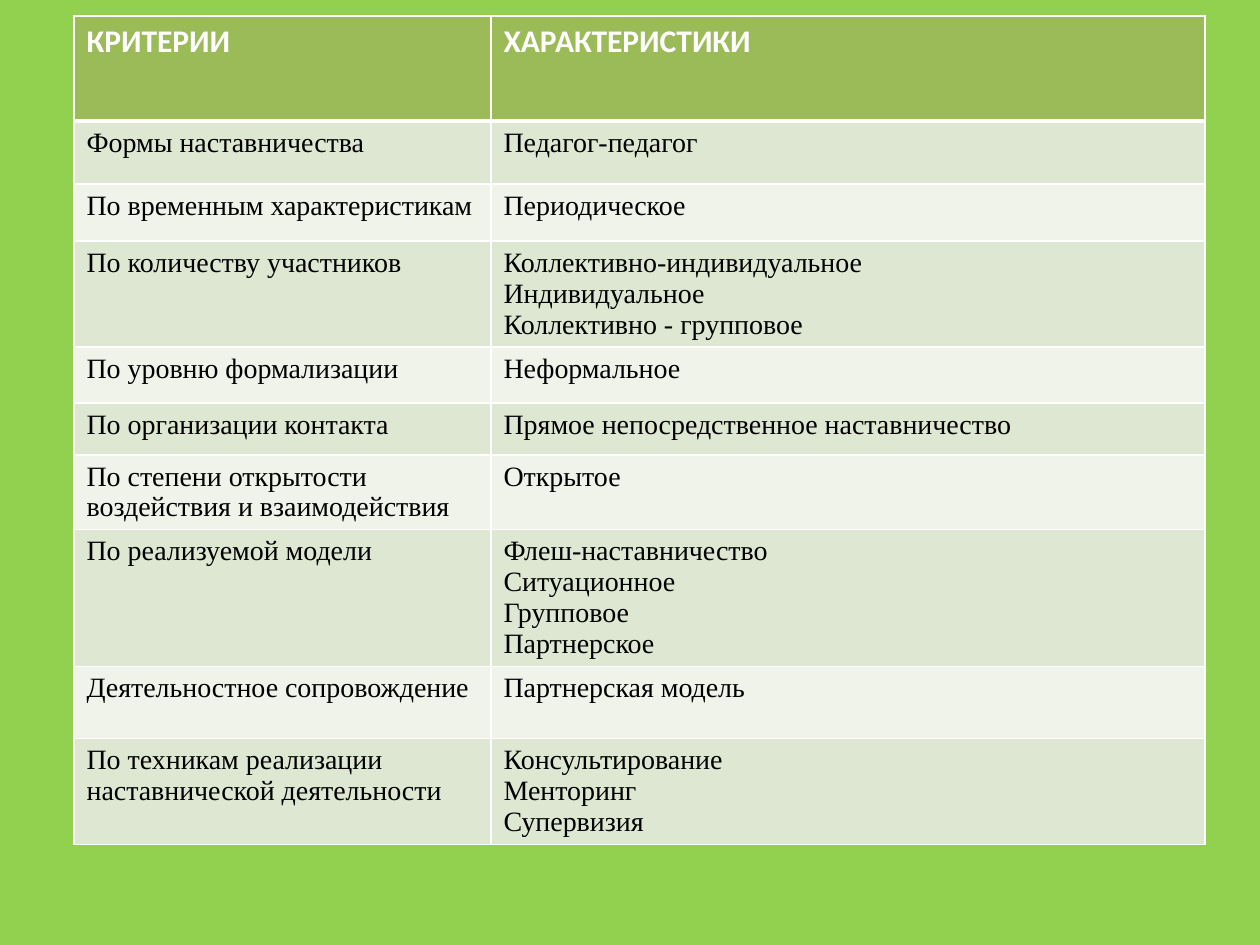
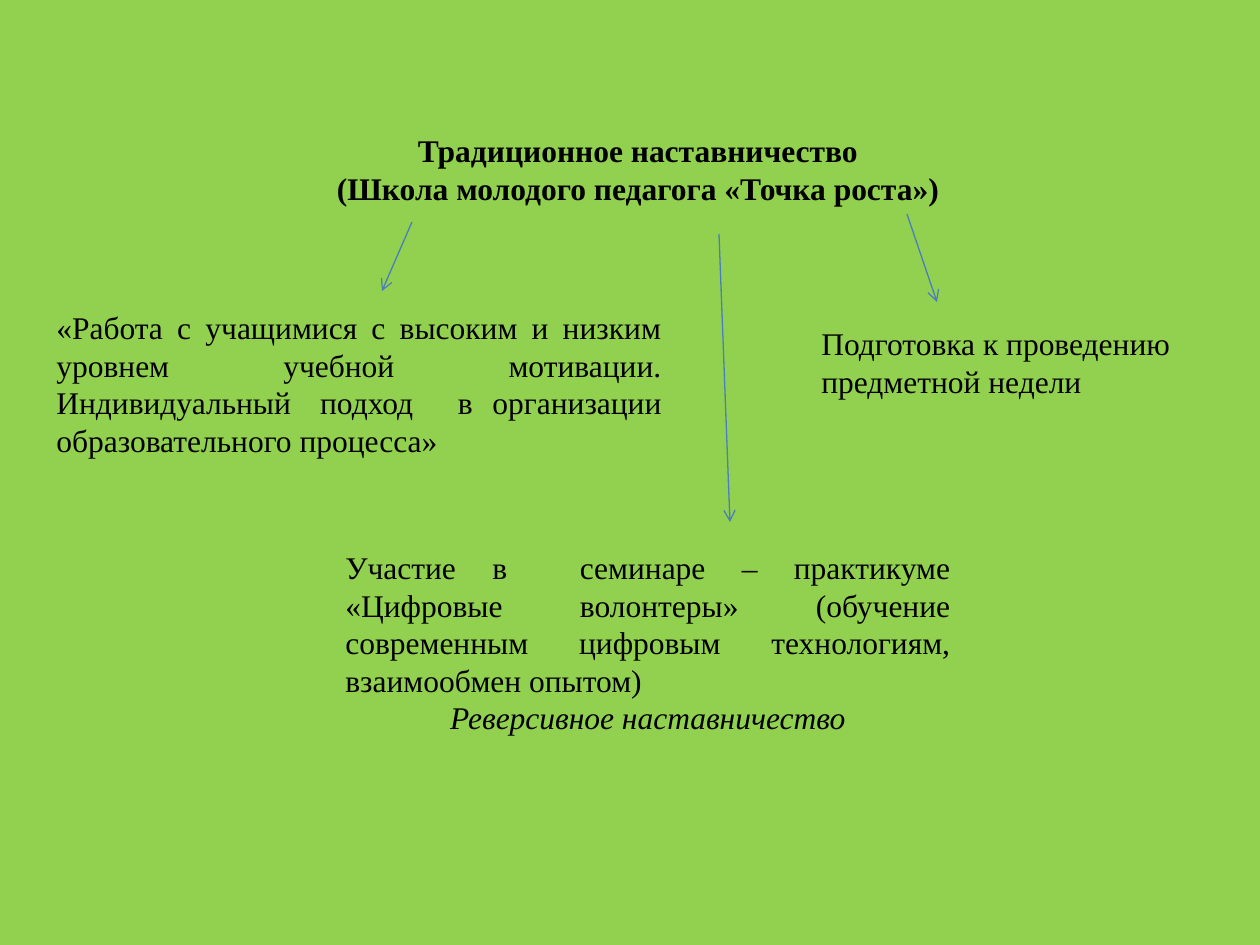
"""Builds two slides on mentoring: a table of criteria and a scheme with arrows."""
from pptx import Presentation
from pptx.dml.color import RGBColor
from pptx.enum.shapes import MSO_CONNECTOR
from pptx.enum.text import MSO_ANCHOR, PP_ALIGN
from pptx.oxml.ns import qn
from pptx.util import Emu, Pt
from lxml.etree import SubElement

HUES = {"back": "92D050", "head": "9BBB59", "odd": "DEE7D1", "even": "EFF3EA",
        "edge": "FFFFFF", "ink": "000000", "line": "4B7EBC"}
SERIF, SANS = "Times New Roman", "Calibri"
LEFT, MID, JUST = PP_ALIGN.LEFT, PP_ALIGN.CENTER, PP_ALIGN.JUSTIFY
SCALE = 914400 / 126

HEAD = ("КРИТЕРИИ", "ХАРАКТЕРИСТИКИ")
ROWS = [
    (63, "Формы наставничества", ["Педагог-педагог"]),
    (57, "По временным характеристикам", ["Периодическое"]),
    (106, "По количеству участников",
     ["Коллективно-индивидуальное", "Индивидуальное", "Коллективно - групповое"]),
    (56, "По уровню формализации", ["Неформальное"]),
    (52, "По организации контакта", ["Прямое непосредственное наставничество"]),
    (74, "По степени открытости воздействия и взаимодействия", ["Открытое"]),
    (137, "По реализуемой модели",
     ["Флеш-наставничество", "Ситуационное", "Групповое", "Партнерское"]),
    (72, "Деятельностное сопровождение", ["Партнерская модель"]),
    (106, "По техникам реализации наставнической деятельности",
     ["Консультирование", "Менторинг", "Супервизия"]),
]
COLS, TOP_ROW, GRID = (417, 714), 105, (74, 16)

TITLE = ((323, 125, 630, 89), [
    ("Традиционное наставничество", MID, {"bold": True}),
    ("(Школа молодого педагога «Точка роста»)", MID, {"bold": True})])
NOTES = [
    ((44, 302, 630, 165), [
        ("«Работа с учащимися с высоким и низким уровнем учебной мотивации. "
         "Индивидуальный \tподход \tв организации образовательного процесса»", JUST, {})]),
    ((809, 318, 382, 89), [("Подготовка к проведению предметной недели", LEFT, {})]),
    ((333, 542, 630, 204), [
        ("Участие в  семинаре – практикуме «Цифровые волонтеры» (обучение "
         "современным цифровым технологиям, взаимообмен опытом)", JUST, {}),
        ("Реверсивное наставничество", MID, {"italic": True})]),
]
ARROWS = [(412, 222, 382, 291), (907, 214, 937, 302), (719, 234, 730, 522)]


def px(*nums):
    return [Emu(round(n * SCALE)) for n in nums]


def tint(name):
    return RGBColor.from_string(HUES[name])


def write(frame, paras, size, step=None, face=SERIF, ink="ink"):
    frame.word_wrap = True
    for i, (text, side, style) in enumerate(paras):
        para = frame.paragraphs[0] if i == 0 else frame.add_paragraph()
        para.alignment = side
        if step:
            para.line_spacing = Pt(step)
        run = para.add_run()
        run.text = text
        font = run.font
        font.name, font.size = face, Pt(size)
        font.bold, font.italic = style.get("bold", False), style.get("italic", False)
        font.color.rgb = tint(ink)


def edge(cell, side, width):
    line = SubElement(cell._tc.get_or_add_tcPr(), qn("a:" + side), w=str(Pt(width)))
    fill = SubElement(line, qn("a:solidFill"))
    SubElement(fill, qn("a:srgbClr"), val=HUES["edge"])


def dress(cell, hue, top, low):
    for side, width in zip(("lnL", "lnR", "lnT", "lnB"), (1, 1, top, low)):
        edge(cell, side, width)
    cell.fill.solid()
    cell.fill.fore_color.rgb = tint(hue)


def page(deck, kind):
    slide = deck.slide_layouts[kind]
    slide = deck.slides.add_slide(slide)
    slide.background.fill.solid()
    slide.background.fill.fore_color.rgb = tint("back")
    return slide


def grid(slide):
    tall = [TOP_ROW] + [row[0] for row in ROWS]
    box = px(*GRID, sum(COLS), sum(tall))
    table = slide.shapes.add_table(len(tall), len(COLS), *box).table
    for parts, sizes, key in ((table.columns, COLS, "width"), (table.rows, tall, "height")):
        for part, size in zip(parts, px(*sizes)):
            setattr(part, key, size)
    for c, text in enumerate(HEAD):
        cell = table.cell(0, c)
        dress(cell, "head", 1, 3)
        write(cell.text_frame, [(text, LEFT, {"bold": True})], 18, face=SANS, ink="edge")
    for r, (_, name, traits) in enumerate(ROWS, 1):
        for c, lines in enumerate(([name], traits)):
            cell = table.cell(r, c)
            dress(cell, "odd" if r % 2 else "even", 3 if r == 1 else 1, 1)
            write(cell.text_frame, [(line, LEFT, {}) for line in lines], 16, 17.7)


def arrow(slide, ends):
    link = slide.shapes.add_connector(MSO_CONNECTOR.STRAIGHT, *px(*ends))
    link.line.color.rgb = tint("line")
    link.line.width = Pt(0.75)
    SubElement(link.line._get_or_add_ln(), qn("a:tailEnd"), type="arrow")
    SubElement(link._element.spPr, qn("a:effectLst"))


def scheme(slide):
    box, paras = TITLE
    title = slide.shapes.title
    title.left, title.top, title.width, title.height = px(*box)
    title.text_frame.vertical_anchor = MSO_ANCHOR.TOP
    write(title.text_frame, paras, 18, 21.5)
    for box, paras in NOTES:
        write(slide.shapes.add_textbox(*px(*box)).text_frame, paras, 18, 21.5)
    for ends in ARROWS:
        arrow(slide, ends)


def main():
    deck = Presentation()
    deck.slide_width, deck.slide_height = px(1260, 945)
    grid(page(deck, 6))
    scheme(page(deck, 5))
    deck.save("out.pptx")


if __name__ == "__main__":
    main()
